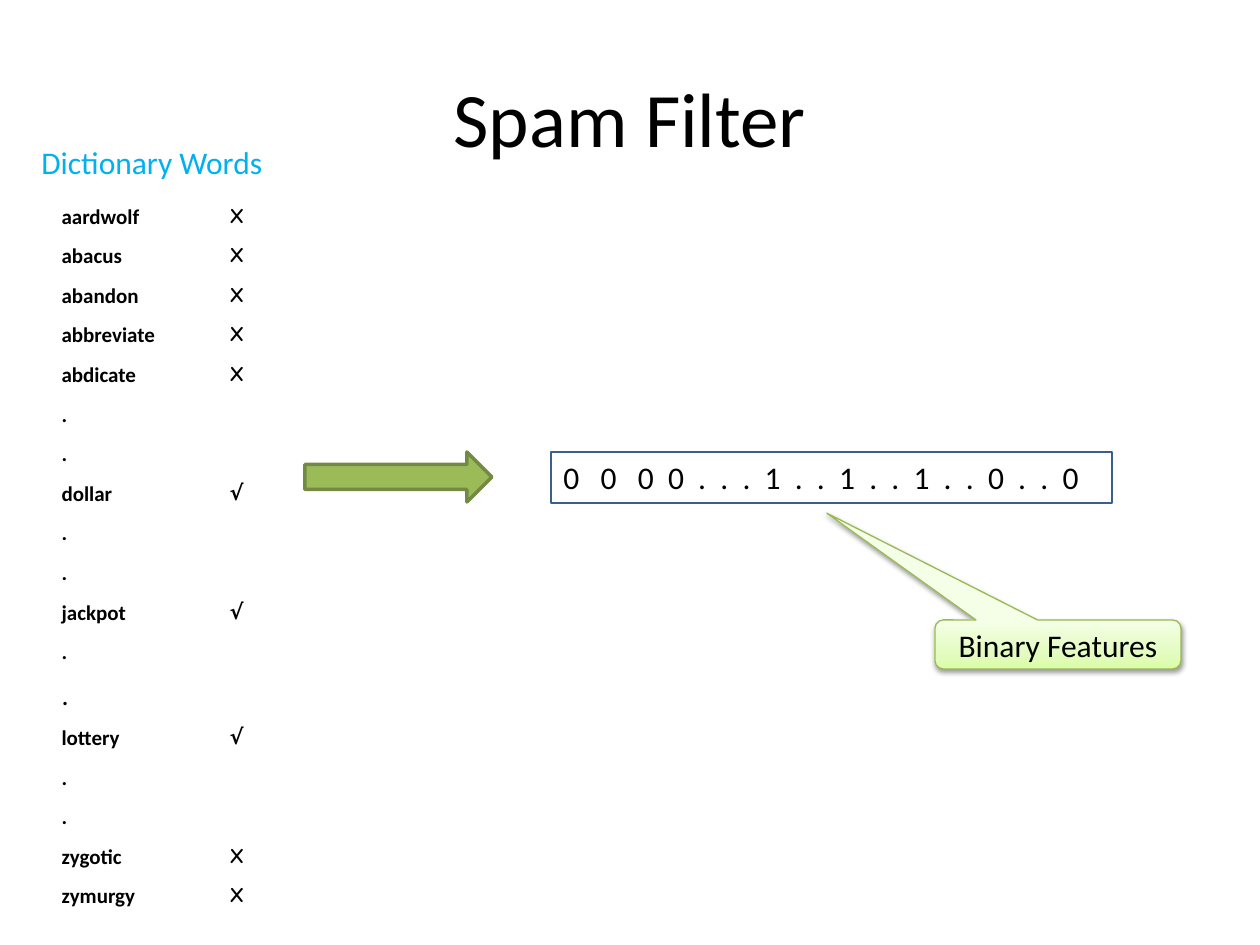
from lxml.etree import SubElement
from pptx import Presentation
from pptx.dml.color import RGBColor
from pptx.enum.shapes import MSO_SHAPE as Shape
from pptx.enum.text import MSO_ANCHOR as Anchor, PP_ALIGN as Align
from pptx.oxml.ns import qn
from pptx.util import Emu, Pt

PX = 914400 // 126
CROSS, TICK = "X", "√"
WORDS = [
    ("aardwolf", CROSS), ("abacus", CROSS), ("abandon", CROSS),
    ("abbreviate", CROSS), ("abdicate", CROSS), (".", ""), (".", ""),
    ("dollar", TICK), (".", ""), (".", ""), ("jackpot", TICK), (".", ""),
    (".", ""), ("lottery", TICK), (".", ""), (".", ""),
    ("zygotic", CROSS), ("zymurgy", CROSS),
]
LARGE_DOT_ROW = 12
FEATURES = "0   0   0  0  .  .  .  1  .  .  1  .  .  1  .  .  0  .  .  0"
CALLOUT_STOPS = [(0, "DAFDA7"), (35, "E4FCC2"), (100, "F5FFE7")]


def px(*lengths):
    """Turn pixel lengths into EMU."""
    return [Emu(length * PX) for length in lengths]


def color(value):
    """Turn a hex string into a colour."""
    return RGBColor.from_string(value)


def write(frame, text, size, align=Align.LEFT, anchor=Anchor.TOP,
          font="Calibri", bold=False, tint="000000"):
    """Put one formatted paragraph in a text frame."""
    frame.text = text
    frame.word_wrap = True
    frame.vertical_anchor = anchor
    para = frame.paragraphs[0]
    para.alignment = align
    for span in para.runs:
        span.font.size = Pt(size)
        span.font.name = font
        span.font.bold = bold
        span.font.color.rgb = color(tint)
    if not text:
        SubElement(para._p, qn("a:endParaRPr"), sz=str(size * 100))


def add_label(page, box, text, size, **style):
    """Add a text box."""
    write(page.shapes.add_textbox(*px(*box)).text_frame, text, size, **style)


def add_outlined(page, kind, box, line, width):
    """Add a preset shape with an outline and no shadow."""
    shape = page.shapes.add_shape(kind, *px(*box))
    shape.shadow.inherit = False
    shape.line.color.rgb = color(line)
    shape.line.width = Pt(width)
    return shape


def add_dictionary(page, box):
    """Add the heading and the table of words with their marks."""
    left, top, width, height = box
    add_label(page, (left - 20, top - 61, 266, 50), "Dictionary Words", 18,
              tint="00B0F0")
    table = page.shapes.add_table(len(WORDS), 2, *px(*box)).table
    table.first_row = table.horz_banding = False
    for index, (word, mark) in enumerate(WORDS):
        large = index == LARGE_DOT_ROW
        word_cell, mark_cell = table.rows[index].cells
        write(word_cell.text_frame, word, 16 if large else 12, bold=not large)
        write(mark_cell.text_frame, mark, 12, font="Comic Neue", bold=True)
        for cell in (word_cell, mark_cell):
            cell.fill.background()


def add_arrow(page, box):
    """Add the arrow from the words to the features."""
    arrow = add_outlined(page, Shape.RIGHT_ARROW, box, "738A42", 2)
    arrow.fill.solid()
    arrow.fill.fore_color.rgb = color("9BBB59")


def add_features(page, box):
    """Add the framed row of binary features."""
    frame = add_outlined(page, Shape.RECTANGLE, box, "3A5F8C", 0.75)
    frame.fill.background()
    write(frame.text_frame, FEATURES, 18)


def add_callout(page, box):
    """Add the callout with its gradient and soft shadow."""
    callout = add_outlined(page, Shape.ROUNDED_RECTANGULAR_CALLOUT, box,
                           "98B955", 0.75)
    for index, value in enumerate((-0.944, -2.677, 0.167)):
        callout.adjustments[index] = round(value, 2)
    callout.fill.gradient()
    callout.fill.gradient_angle = 90
    properties = callout._element.spPr
    stops = properties.find(".//" + qn("a:gsLst"))
    stops.clear()
    for position, tint in CALLOUT_STOPS:
        stop = SubElement(stops, qn("a:gs"), pos=str(position * 1000))
        SubElement(stop, qn("a:srgbClr"), val=tint)
    shadow = SubElement(properties.find(qn("a:effectLst")), qn("a:outerShdw"),
                        blurRad=str(Pt(3.1)), dist=str(Pt(1.6)),
                        dir="5400000", rotWithShape="0")
    shade = SubElement(shadow, qn("a:srgbClr"), val="000000")
    SubElement(shade, qn("a:alpha"), val="38000")
    write(callout.text_frame, "Binary Features", 18, Align.CENTER,
          Anchor.MIDDLE)


def main():
    """Build the slide and save it."""
    deck = Presentation()
    deck.slide_width, deck.slide_height = px(1260, 945)
    page = deck.slides.add_slide(deck.slide_layouts[6])
    add_label(page, (63, 38, 1134, 158), "Spam Filter", 44,
              align=Align.CENTER, anchor=Anchor.MIDDLE)
    add_dictionary(page, (49, 198, 336, 713))
    add_arrow(page, (305, 452, 187, 50))
    add_features(page, (551, 452, 561, 51))
    add_callout(page, (935, 620, 246, 49))
    deck.save("out.pptx")


if __name__ == "__main__":
    main()
